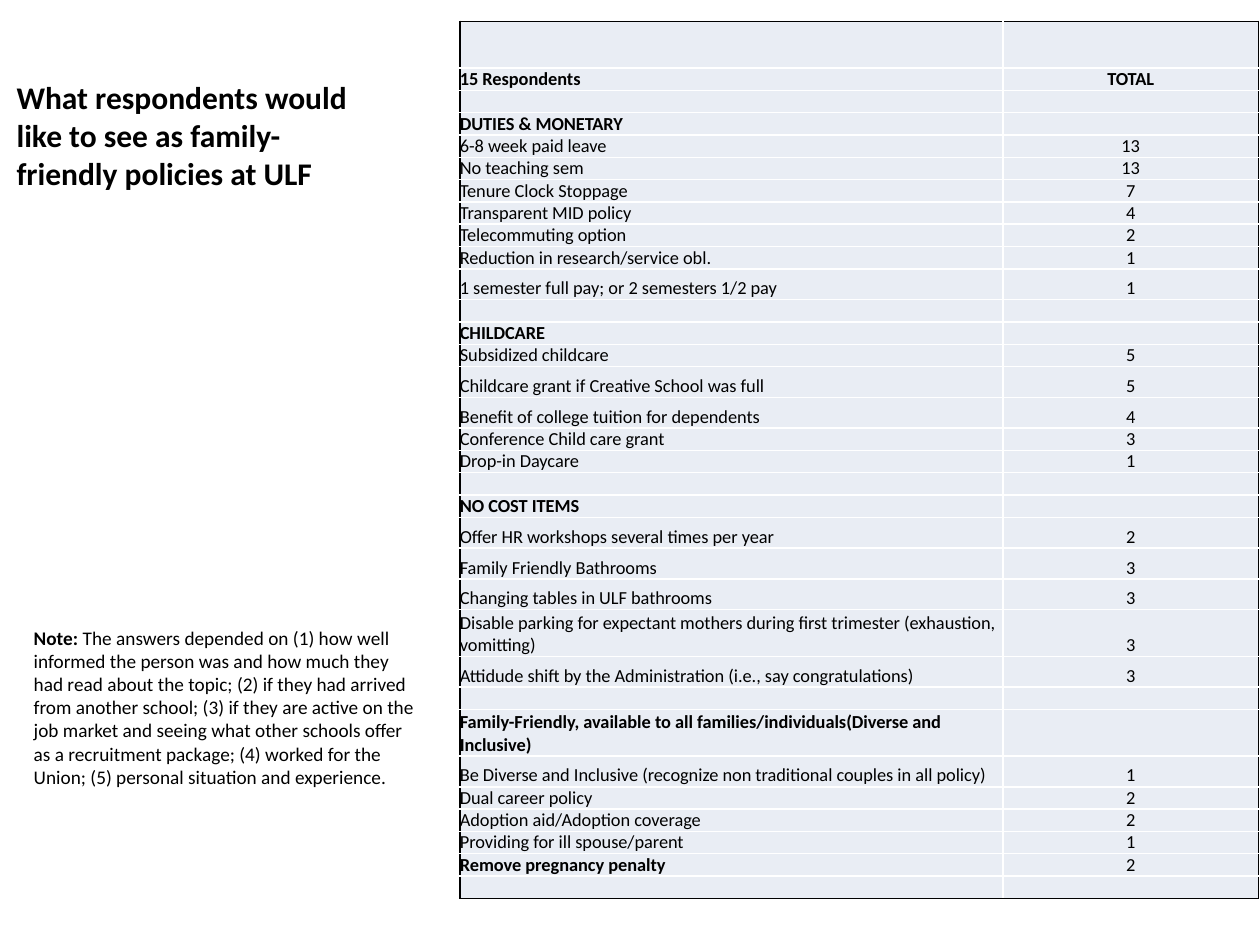
from lxml import etree
from pptx import Presentation
from pptx.dml.color import RGBColor
from pptx.enum.text import MSO_ANCHOR, MSO_AUTO_SIZE, PP_ALIGN
from pptx.oxml.ns import qn
from pptx.util import Cm, Pt

THEME = {
    "font": "Calibri", "text": "000000", "cell": "E9EDF4",
    "frame": "000000", "grid": "FFFFFF",
    "title_size": 18, "note_size": 11, "table_size": 10.5,
}

# Row heights in centimetres
LOW, MEDIUM, HIGH = 0.45, 0.62, 0.94

# Label, total, height, bold label
BLANK = ("", "", LOW, False)
ROWS = [
    ("", "", HIGH, False),
    ("15 Respondents", "TOTAL", LOW, True),
    BLANK,
    ("DUTIES & MONETARY", "", LOW, True),
    ("6-8 week paid leave", "13", LOW, False),
    ("No teaching sem", "13", LOW, False),
    ("Tenure Clock Stoppage", "7", LOW, False),
    ("Transparent MID policy", "4", LOW, False),
    ("Telecommuting option", "2", LOW, False),
    ("Reduction in research/service obl.", "1", LOW, False),
    ("1 semester full pay; or 2 semesters 1/2 pay", "1", MEDIUM, False),
    BLANK,
    ("CHILDCARE", "", LOW, True),
    ("Subsidized childcare", "5", LOW, False),
    ("Childcare grant if Creative School was full", "5", MEDIUM, False),
    ("Benefit of college tuition for dependents", "4", MEDIUM, False),
    ("Conference Child care grant", "3", LOW, False),
    ("Drop-in Daycare", "1", LOW, False),
    BLANK,
    ("NO COST ITEMS", "", LOW, True),
    ("Offer HR workshops several times per year", "2", MEDIUM, False),
    ("Family Friendly Bathrooms", "3", MEDIUM, False),
    ("Changing tables in ULF bathrooms", "3", MEDIUM, False),
    ("Disable parking for expectant mothers during first trimester "
     "(exhaustion, vomitting)", "3", HIGH, False),
    ("Attidude shift by the Administration (i.e., say congratulations)", "3", MEDIUM, False),
    BLANK,
    ("Family-Friendly, available to all families/individuals"
     "(Diverse and Inclusive)", "", HIGH, True),
    ("Be Diverse and Inclusive (recognize non traditional couples in all policy)",
     "1", MEDIUM, False),
    ("Dual career policy", "2", LOW, False),
    ("Adoption aid/Adoption coverage", "2", LOW, False),
    ("Providing for ill spouse/parent", "1", LOW, False),
    ("Remove pregnancy penalty", "2", LOW, True),
    BLANK,
]


def add_span(para, text, size, bold=False):
    span = para.add_run()
    span.text = text
    span.font.name = THEME["font"]
    span.font.size = Pt(size)
    span.font.bold = bold
    span.font.color.rgb = RGBColor.from_string(THEME["text"])


def set_borders(cell, colours):
    properties = cell._tc.get_or_add_tcPr()
    for position, (side, colour) in enumerate(colours.items()):
        line = etree.Element(qn(f"a:ln{side}"), w=str(Pt(1)))
        fill = etree.SubElement(line, qn("a:solidFill"))
        etree.SubElement(fill, qn("a:srgbClr"), val=colour)
        properties.insert(position, line)


deck = Presentation()
deck.slide_width, deck.slide_height = Cm(25.4), Cm(19.05)
page = deck.slides.add_slide(deck.slide_layouts[5])

# Title
title = page.shapes.title
title.left, title.top, title.width, title.height = Cm(0.08), Cm(1.45), Cm(7.62), Cm(2.57)
title.text_frame.word_wrap = True
title.text_frame.auto_size = MSO_AUTO_SIZE.SHAPE_TO_FIT_TEXT
title.text_frame.vertical_anchor = MSO_ANCHOR.TOP
para = title.text_frame.paragraphs[0]
para.alignment = PP_ALIGN.LEFT
add_span(para, "What respondents would like to see as family-friendly policies at ULF",
         THEME["title_size"], True)

# Response table
frame = page.shapes.add_table(len(ROWS), 2, Cm(9.27), Cm(0.43), Cm(16.1),
                              Cm(sum(row[2] for row in ROWS)))
table = frame.table
table.first_row = table.horz_banding = False
table.columns[0].width, table.columns[1].width = Cm(10.95), Cm(5.15)
last_row = len(ROWS) - 1
for row, (label, total, height, bold) in enumerate(ROWS):
    table.rows[row].height = Cm(height)
    for column, text in enumerate((label, total)):
        cell = table.cell(row, column)
        cell.margin_left = cell.margin_right = cell.margin_top = cell.margin_bottom = 0
        cell.vertical_anchor = MSO_ANCHOR.BOTTOM
        cell.fill.solid()
        cell.fill.fore_color.rgb = RGBColor.from_string(THEME["cell"])
        outer = {"L": column == 0, "R": column == 1, "T": row == 0, "B": row == last_row}
        set_borders(cell, {side: THEME["frame" if edge else "grid"]
                           for side, edge in outer.items()})
        para = cell.text_frame.paragraphs[0]
        para.alignment = PP_ALIGN.CENTER if column else PP_ALIGN.LEFT
        if text:
            add_span(para, text, THEME["table_size"],
                     bold and (column == 0 or text == "TOTAL"))
        else:
            # Keeps an empty row as low as a row of text
            etree.SubElement(para._p, qn("a:endParaRPr"),
                             sz=str(int(THEME["table_size"] * 100)))

# Note
note = page.shapes.add_textbox(Cm(0.43), Cm(12.5), Cm(8.26), Cm(3.56))
note.text_frame.word_wrap = True
note.text_frame.auto_size = MSO_AUTO_SIZE.SHAPE_TO_FIT_TEXT
para = note.text_frame.paragraphs[0]
add_span(para, "Note: ", THEME["note_size"], True)
add_span(para, "The answers depended on (1) how well informed the person was and how much "
         "they had read about the topic; (2) if they had arrived from another school; "
         "(3) if they are active on the job market and seeing what other schools offer as "
         "a recruitment package; (4) worked for the Union; (5) personal situation and "
         "experience.", THEME["note_size"])

deck.save("out.pptx")
